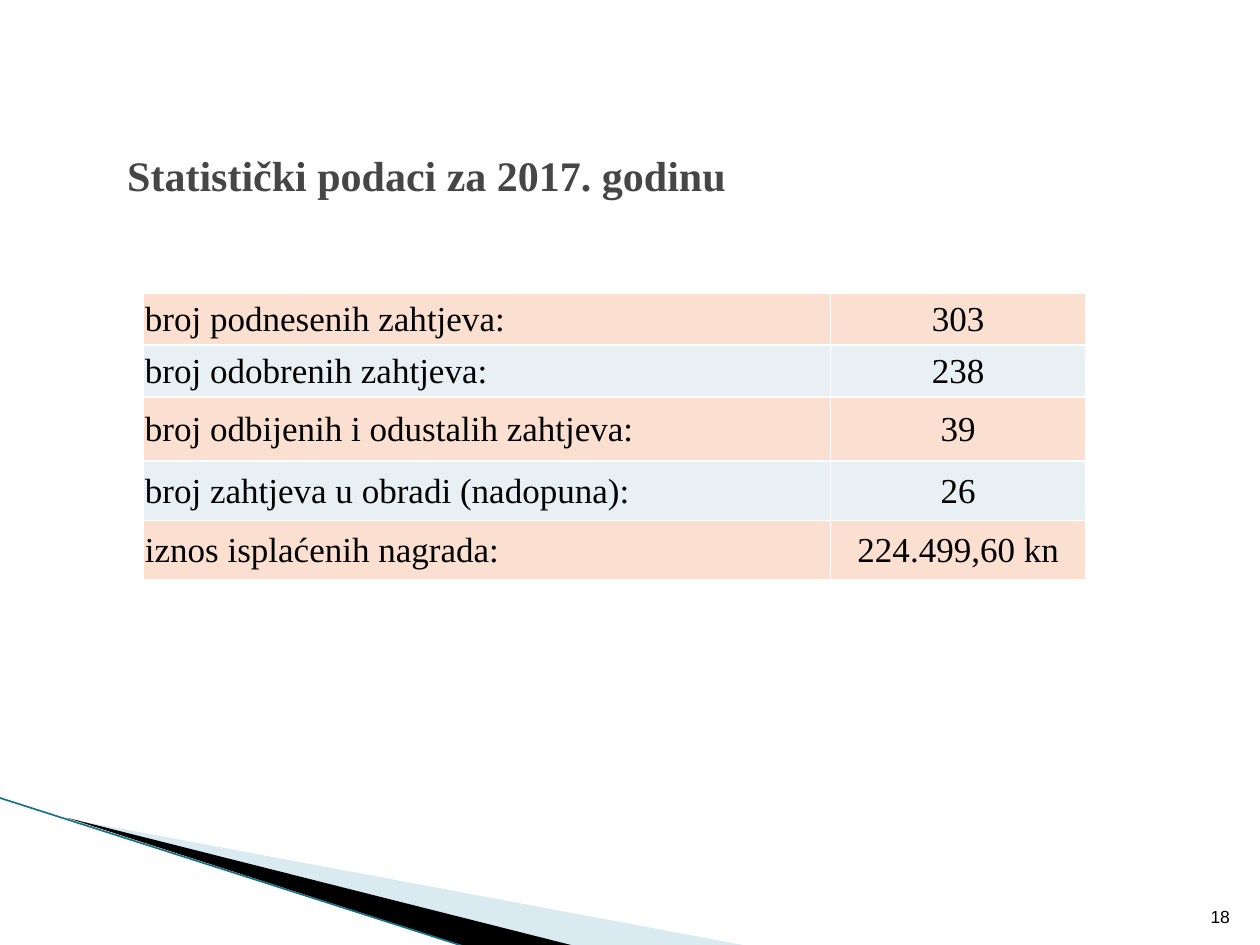
import pptx
import pptx.dml.color
import pptx.enum.shapes
import pptx.enum.text
import pptx.oxml
import pptx.oxml.ns
import pptx.util
from pptx.util import Inches

TITLE = "Statistički podaci za 2017. godinu"
PAGE_NUMBER = "18"
STATISTICS = [
    # label, value, row height
    ("broj podnesenih zahtjeva:", "303", 0.41),
    ("broj odobrenih zahtjeva:", "238", 0.41),
    ("broj odbijenih i odustalih zahtjeva:", "39", 0.51),
    ("broj zahtjeva u obradi (nadopuna):", "26", 0.47),
    ("iznos isplaćenih nagrada:", "224.499,60 kn", 0.47),
]
COLUMN_WIDTHS = (5.45, 2.03)
TABLE_LEFT, TABLE_TOP = 1.14, 2.33
WEDGES = [
    # colour, opacity in percent, corners
    ("A0CBDC", 40, [(0.55, 6.5), (5.95, 7.51), (4.56, 7.51)]),
    ("000000", 100, [(0.53, 6.49), (4.57, 7.51), (3.72, 7.52)]),
]
EDGE = ((-0.01, 6.33), (3.71, 7.52))

THEME = {
    "title": {"name": "Times New Roman", "size": 24, "bold": True, "color": "464646"},
    "cell": {"name": "Times New Roman", "size": 20, "bold": False, "color": "000000"},
    "page": {"name": "Arial", "size": 10, "bold": False, "color": "000000"},
    "bands": ("FBE0D1", "E8F0F4"),
    "border": ("FFFFFF", 1),
    "edge": ("1A7086", 0.95),
}
ALIGN = pptx.enum.text.PP_ALIGN
ANCHOR = pptx.enum.text.MSO_ANCHOR


def rgb(value):
    return pptx.dml.color.RGBColor.from_string(value)


def write(frame, text, style, align):
    paragraph = frame.paragraphs[0]
    paragraph.alignment = align
    run = paragraph.add_run()
    run.text = text
    values = {**THEME[style], "size": pptx.util.Pt(THEME[style]["size"])}
    run.font.color.rgb = rgb(values.pop("color"))
    for name, value in values.items():
        setattr(run.font, name, value)


def add_wedge(slide, color, opacity, corners):
    points = [(Inches(x), Inches(y)) for x, y in corners]
    builder = slide.shapes.build_freeform(*points[0])
    builder.add_line_segments(points[1:], close=True)
    wedge = builder.convert_to_shape()
    wedge.shadow.inherit = False
    wedge.line.fill.background()
    wedge.fill.solid()
    wedge.fill.fore_color.rgb = rgb(color)
    if opacity < 100:
        color_node = wedge.fill._xPr.find(".//" + pptx.oxml.ns.qn("a:srgbClr"))
        alpha = pptx.oxml.parse_xml(f'<a:alpha {pptx.oxml.ns.nsdecls("a")} val="{opacity * 1000}"/>')
        color_node.append(alpha)


def add_edge(slide):
    (x1, y1), (x2, y2) = EDGE
    edge = slide.shapes.add_connector(
        pptx.enum.shapes.MSO_CONNECTOR.STRAIGHT, Inches(x1), Inches(y1), Inches(x2), Inches(y2))
    color, width = THEME["edge"]
    edge.line.color.rgb = rgb(color)
    edge.line.width = pptx.util.Pt(width)
    edge._element.spPr.append(
        pptx.oxml.parse_xml(f'<a:effectLst {pptx.oxml.ns.nsdecls("a")}/>'))


def add_borders(cell):
    color, width = THEME["border"]
    properties = cell._tc.get_or_add_tcPr()
    for side in "LRTB":
        properties.append(pptx.oxml.parse_xml(
            f'<a:ln{side} {pptx.oxml.ns.nsdecls("a")} w="{pptx.util.Pt(width)}">'
            f'<a:solidFill><a:srgbClr val="{color}"/></a:solidFill></a:ln{side}>'))


def add_statistics(slide):
    heights = [height for _, _, height in STATISTICS]
    table = slide.shapes.add_table(
        len(STATISTICS), len(COLUMN_WIDTHS), Inches(TABLE_LEFT), Inches(TABLE_TOP),
        Inches(sum(COLUMN_WIDTHS)), Inches(sum(heights))).table
    table.first_row = table.horz_banding = False
    for column, width in zip(table.columns, COLUMN_WIDTHS):
        column.width = Inches(width)
    cell_format = {
        "margin_left": Inches(0.01), "margin_right": Inches(0.01),
        "margin_top": Inches(0.01), "margin_bottom": 0,
        "vertical_anchor": ANCHOR.MIDDLE,
    }
    for index, (label, value, height) in enumerate(STATISTICS):
        table.rows[index].height = Inches(height)
        for column, (text, align) in enumerate([(label, ALIGN.LEFT), (value, ALIGN.CENTER)]):
            cell = table.cell(index, column)
            for name, setting in cell_format.items():
                setattr(cell, name, setting)
            add_borders(cell)
            cell.fill.solid()
            cell.fill.fore_color.rgb = rgb(THEME["bands"][index % 2])
            write(cell.text_frame, text, "cell", align)


def add_title(slide):
    title = slide.shapes.title
    box = {"left": 0.91, "top": 0.76, "width": 7.72, "height": 1.25}
    for name, value in box.items():
        setattr(title, name, Inches(value))
    title.text_frame.vertical_anchor = ANCHOR.MIDDLE
    write(title.text_frame, TITLE, "title", ALIGN.LEFT)


def add_page_number(slide):
    frame = slide.shapes.add_textbox(
        Inches(9.46), Inches(7.01), Inches(0.4), Inches(0.4)).text_frame
    frame.word_wrap = True
    frame.vertical_anchor = ANCHOR.BOTTOM
    write(frame, PAGE_NUMBER, "page", ALIGN.RIGHT)


def main():
    deck = pptx.Presentation()
    deck.slide_width, deck.slide_height = Inches(10), Inches(7.5)
    slide = deck.slides.add_slide(deck.slide_layouts.get_by_name("Title Only"))
    for wedge in WEDGES:
        add_wedge(slide, *wedge)
    add_edge(slide)
    add_statistics(slide)
    add_page_number(slide)
    add_title(slide)
    deck.save("out.pptx")


if __name__ == "__main__":
    main()
